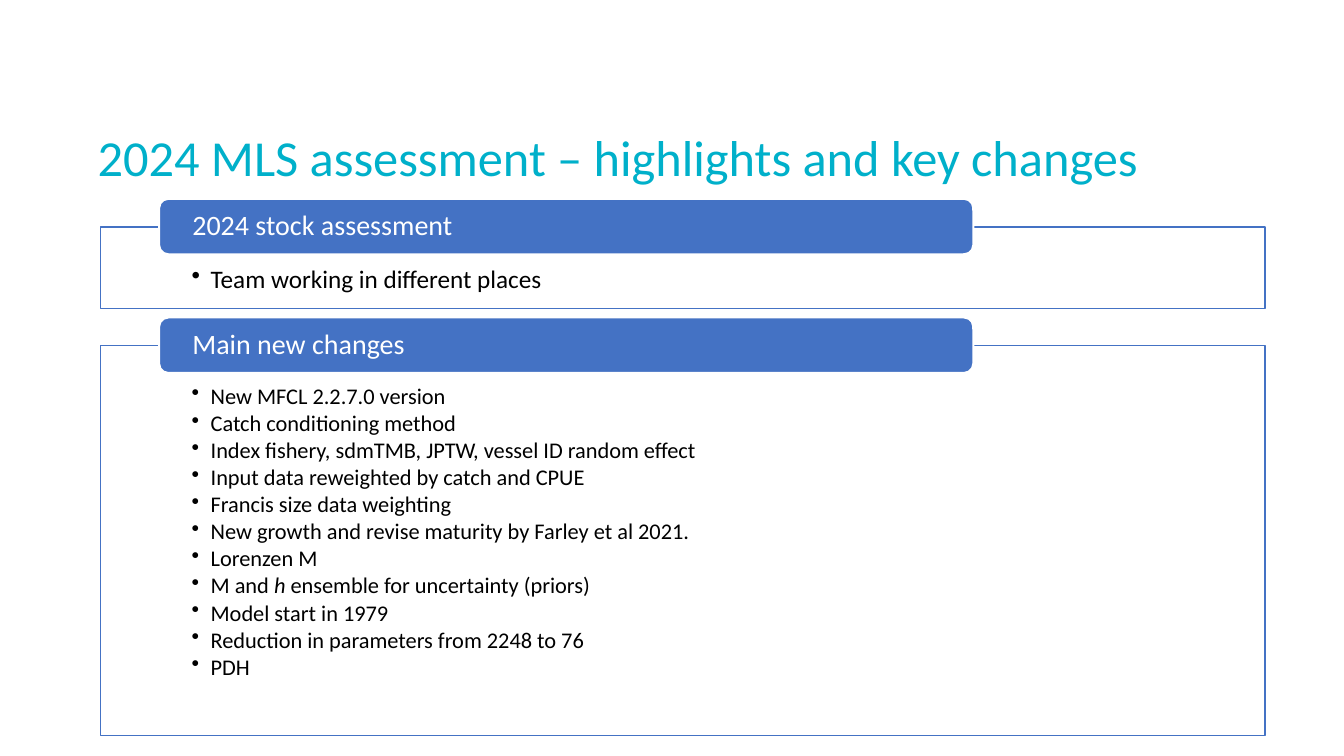
from pptx import Presentation
from pptx.dml.color import RGBColor
from pptx.enum import shapes, text
from pptx.oxml.ns import qn
from pptx.util import Cm, Pt
from lxml import etree

TITLE = "2024 MLS assessment – highlights and key changes"
# Each panel: heading, top and height in cm, type size, bullets.
# A bullet is a tuple of pieces; every second piece is italic.
PANELS = [
    ("2024 stock assessment", 5.72, 2.06, 18, [
        ("Team working in different places",),
    ]),
    ("Main new changes", 8.71, 9.83, 16, [
        ("New MFCL 2.2.7.0 version",),
        ("Catch conditioning method",),
        ("Index fishery, sdmTMB, JPTW, vessel ID random effect",),
        ("Input data reweighted by catch and CPUE",),
        ("Francis size data weighting",),
        ("New growth and revise maturity by Farley et al 2021.",),
        ("Lorenzen M",),
        ("M and ", "h", " ensemble for uncertainty (priors)"),
        ("Model start in 1979",),
        ("Reduction in parameters from 2248 to 76",),
        ("PDH",),
    ]),
]
THEME = {
    "font": "Calibri", "title": 36, "head": 20,
    "aqua": RGBColor(0x00, 0xB0, 0xCA), "blue": RGBColor(0x44, 0x72, 0xC4),
    "white": RGBColor(255, 255, 255), "black": RGBColor(0, 0, 0),
}
LEFT, WIDTH = 2.54, 29.34
TAB_LEFT, TAB_WIDTH, TAB_HEIGHT, TAB_RISE = 4.01, 20.52, 1.4, 0.71
INDENT = 0.48


def style(para, size, color):
    para.alignment = text.PP_ALIGN.LEFT
    para.line_spacing = 0.9
    for run in para.runs:
        font = run.font
        font.name, font.size = THEME["font"], Pt(size)
        font.color.rgb = THEME[color]


def set_frame(frame, anchor, left, top, right, bottom):
    frame.word_wrap = True
    frame.vertical_anchor = anchor
    frame.margin_left, frame.margin_top = Cm(left), Cm(top)
    frame.margin_right, frame.margin_bottom = Cm(right), Cm(bottom)


def add_block(slide, kind, box, fill, line, weight):
    block = slide.shapes.add_shape(kind, *map(Cm, box))
    block.shadow.inherit = False
    block.fill.solid()
    block.fill.fore_color.rgb = THEME[fill]
    block.line.color.rgb = THEME[line]
    block.line.width = Pt(weight)
    return block


def add_bullet(para):
    props = para._p.get_or_add_pPr()
    props.set("marL", str(Cm(INDENT)))
    props.set("indent", str(-Cm(INDENT)))
    etree.SubElement(props, qn("a:buChar")).set("char", "•")


def add_panel(slide, head, top, height, size, items):
    body = add_block(slide, shapes.MSO_SHAPE.RECTANGLE,
                     (LEFT, top, WIDTH, height), "white", "blue", 1)
    frame = body.text_frame
    set_frame(frame, text.MSO_ANCHOR.TOP, 2.29, 0.99, 2.29, 0.3)
    for row, pieces in enumerate(items):
        para = frame.add_paragraph() if row else frame.paragraphs[0]
        add_bullet(para)
        for spot, piece in enumerate(pieces):
            run = para.add_run()
            run.text = piece
            if spot % 2:
                run.font.italic = True
        style(para, size, "black")
        para.space_after = Pt(2.1)

    tab = add_block(slide, shapes.MSO_SHAPE.ROUNDED_RECTANGLE,
                    (TAB_LEFT, top - TAB_RISE, TAB_WIDTH, TAB_HEIGHT),
                    "blue", "white", 1.5)
    set_frame(tab.text_frame, text.MSO_ANCHOR.MIDDLE, 0.77, 0, 0.77, 0)
    tab.text_frame.text = head
    style(tab.text_frame.paragraphs[0], THEME["head"], "white")


def main():
    deck = Presentation()
    deck.slide_width, deck.slide_height = Cm(33.87), Cm(19.05)
    slide = deck.slides.add_slide(deck.slide_layouts[6])
    title = slide.shapes.add_textbox(Cm(2.21), Cm(3.23), Cm(30.76), Cm(2.03))
    set_frame(title.text_frame, text.MSO_ANCHOR.TOP, 0.25, 0.13, 0.25, 0.13)
    title.text_frame.text = TITLE
    style(title.text_frame.paragraphs[0], THEME["title"], "aqua")
    for panel in PANELS:
        add_panel(slide, *panel)
    deck.save("out.pptx")


if __name__ == "__main__":
    main()
